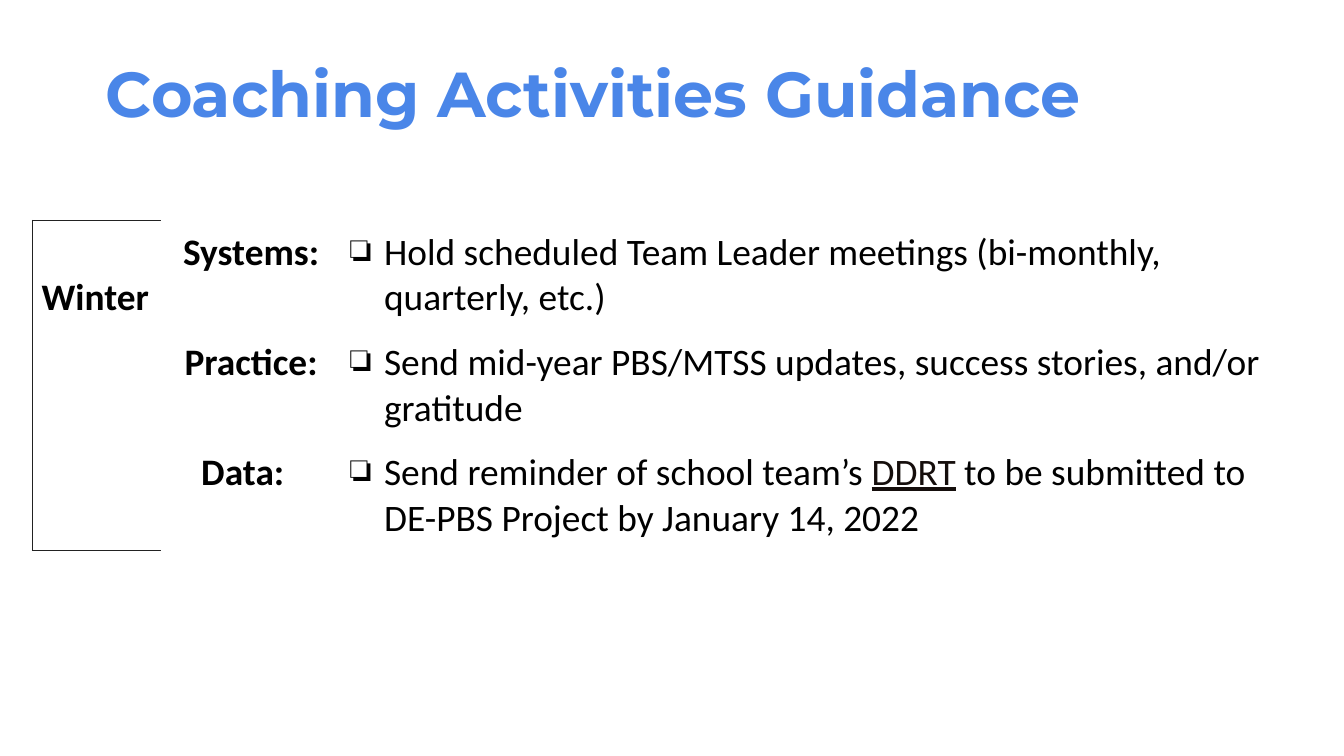
from lxml.etree import SubElement
from pptx import Presentation
from pptx.dml.color import RGBColor
from pptx.enum.text import MSO_ANCHOR, MSO_AUTO_SIZE, PP_ALIGN
from pptx.oxml import parse_xml
from pptx.oxml.ns import nsdecls, qn
from pptx.util import Pt

BLUE = RGBColor(0x4A, 0x86, 0xE8)
BLACK = RGBColor(0, 0, 0)
TERM = RGBColor(0x15, 0x0E, 0x0C)
WHITE = RGBColor(0xFF, 0xFF, 0xFF)
BRACKET = RGBColor(0x22, 0x22, 0x22)

COLUMN_WIDTHS = [69, 96.5, 507.5]
ROW_HEIGHT = 58
CELL_MARGIN = 5
LINE_HEIGHT = 24.4

# Each activity is a list of (text, is_underlined) runs.
ACTIVITIES = [
    ("Systems:", [("Hold scheduled Team Leader meetings (bi-monthly, quarterly, etc.)", False)]),
    ("Practice:", [("Send mid-year PBS/MTSS updates, success stories, and/or gratitude", False)]),
    ("Data:", [("Send reminder of school team’s ", False), ("DDRT", True),
               (" to be submitted to DE-PBS Project by January 14, 2022", False)]),
]


def add_title(slide, text):
    title = slide.shapes.title
    title.left, title.top, title.width, title.height = Pt(49.5), Pt(21.6), Pt(620.6), Pt(51)
    frame = title.text_frame
    frame.text = text
    frame.auto_size = MSO_AUTO_SIZE.NONE
    frame.vertical_anchor = MSO_ANCHOR.TOP
    frame.margin_left = frame.margin_right = Pt(7.2)
    frame.margin_top = frame.margin_bottom = Pt(7.2)
    heading = frame.paragraphs[0]
    heading.alignment = PP_ALIGN.LEFT
    heading.line_spacing = 1.0
    heading.font.name = "Montserrat"
    heading.font.size = Pt(34)
    heading.font.bold = True
    heading.font.color.rgb = BLUE


def set_borders(cell, left, right, top, bottom):
    properties = cell._tc.get_or_add_tcPr()
    for index, (side, color) in enumerate(zip("LRTB", (left, right, top, bottom))):
        properties.insert(index, parse_xml(
            f'<a:ln{side} {nsdecls("a")} w="{Pt(0.5)}"><a:solidFill>'
            f'<a:srgbClr val="{color}"/></a:solidFill></a:ln{side}>'))


def format_cell(cell):
    cell.fill.background()
    cell.vertical_anchor = MSO_ANCHOR.TOP
    cell.margin_left = cell.margin_right = Pt(CELL_MARGIN)
    cell.margin_top = cell.margin_bottom = Pt(CELL_MARGIN)


def write_runs(cell, runs, bold):
    paragraph = cell.text_frame.paragraphs[0]
    paragraph.font.name = "Calibri"
    paragraph.font.size = Pt(20)
    paragraph.font.bold = bold
    for text, underlined in runs:
        run = paragraph.add_run()
        run.text = text
        run.font.name = "Calibri"
        run.font.size = Pt(20)
        run.font.bold = bold
        run.font.color.rgb = TERM if underlined else BLACK
        if underlined:
            run.font.underline = True
    return paragraph


def add_checkbox(paragraph):
    properties = paragraph._p.get_or_add_pPr()
    properties.set("marL", str(Pt(18)))
    properties.set("indent", str(Pt(-18)))
    color = parse_xml(f'<a:buClr {nsdecls("a")}><a:srgbClr val="{BLACK}"/></a:buClr>')
    properties.insert(0, color)
    bullet = SubElement(properties, qn("a:buChar"))
    bullet.set("char", "❏")
    color.addnext(bullet)


def add_activity_table(slide, season, activities):
    frame = slide.shapes.add_table(len(activities), len(COLUMN_WIDTHS), Pt(17.3), Pt(118),
                                   Pt(sum(COLUMN_WIDTHS)), Pt(ROW_HEIGHT * len(activities)))
    table = frame.table
    table.first_row = table.horz_banding = False
    for column, width in zip(table.columns, COLUMN_WIDTHS):
        column.width = Pt(width)
    for cell in table.iter_cells():
        format_cell(cell)

    last = len(activities) - 1
    for row, (area, activity) in enumerate(activities):
        season_part, area_cell, activity_cell = table.rows[row].cells
        set_borders(season_part, BRACKET, WHITE, BRACKET if row == 0 else WHITE,
                    BRACKET if row in (0, last) else WHITE)
        for cell in (area_cell, activity_cell):
            set_borders(cell, WHITE, WHITE, WHITE, WHITE)
        write_runs(area_cell, [(area, False)], bold=True).alignment = PP_ALIGN.CENTER
        add_checkbox(write_runs(activity_cell, activity, bold=False))
    # The last area sits a little left of the column's centre.
    table.cell(last, 1).margin_right = Pt(CELL_MARGIN + 9)

    season_cell = table.cell(0, 0)
    season_cell.merge(table.cell(last, 0))
    season_cell.margin_top = Pt(CELL_MARGIN + LINE_HEIGHT)
    write_runs(season_cell, [(season, False)], bold=True)


def main():
    presentation = Presentation()
    presentation.slide_width, presentation.slide_height = Pt(720), Pt(405)
    slide = presentation.slides.add_slide(presentation.slide_layouts[5])
    add_title(slide, "Coaching Activities Guidance")
    add_activity_table(slide, "Winter", ACTIVITIES)
    presentation.save("out.pptx")


if __name__ == "__main__":
    main()
